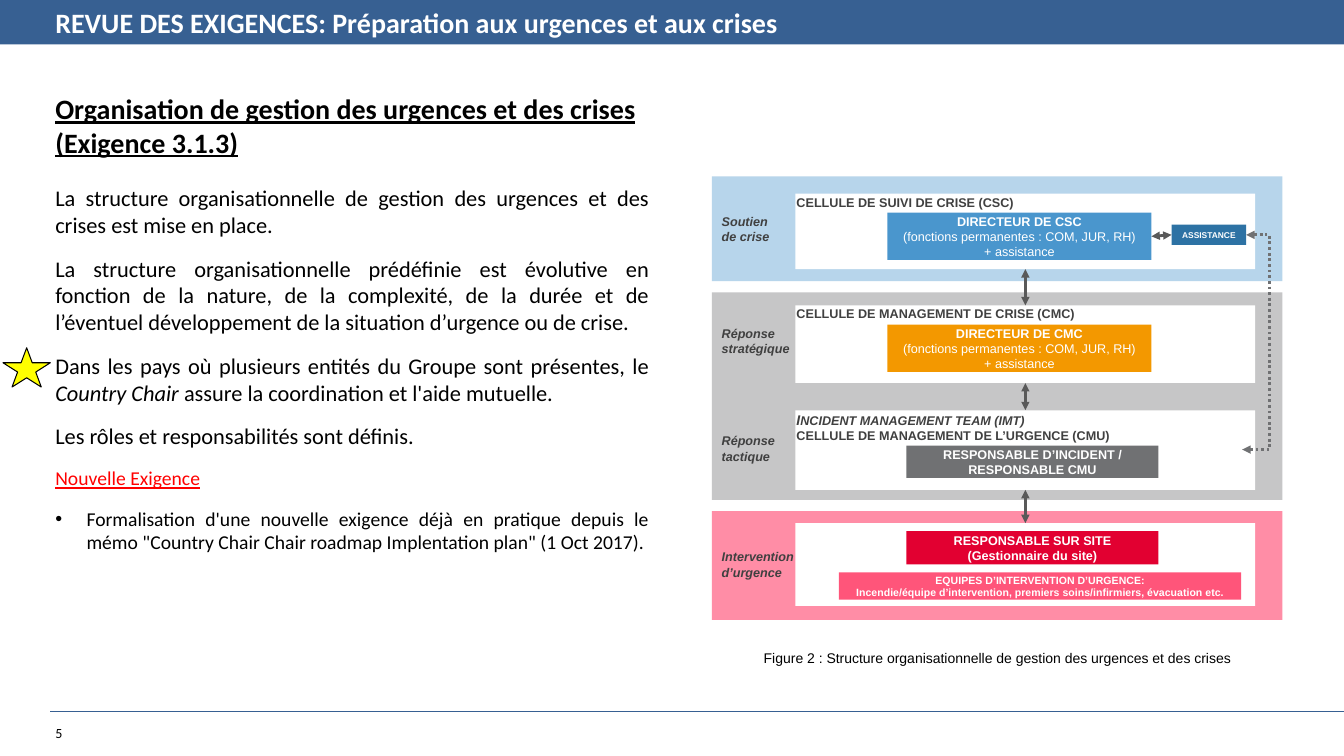
"""Build the slide on how emergencies and crises are managed."""
from dataclasses import dataclass, field
from typing import Any, Optional

import lxml.etree
import pptx
import pptx.dml.color
import pptx.enum.dml
import pptx.enum.shapes
import pptx.enum.text
import pptx.oxml.ns
import pptx.util

Inches = pptx.util.Inches
Pt = pptx.util.Pt
qn = pptx.oxml.ns.qn
ALIGN = pptx.enum.text.PP_ALIGN
ANCHOR = pptx.enum.text.MSO_ANCHOR
SHAPE = pptx.enum.shapes.MSO_SHAPE

HUES = {
    "navy": "376092", "white": "FFFFFF", "black": "000000", "red": "FF0000",
    "yellow": "FFFF00", "ink": "404040", "arrow": "595959", "slate": "707173",
    "sky": "B7D5EB", "grey": "C6C6C7", "pink": "FF8DA6", "blue": "4A96CD",
    "orange": "F39800", "crimson": "E20031", "rose": "FF557A", "teal": "2D72A4",
}


@dataclass
class Box:
    name: str
    x: float
    y: float
    w: float
    h: float
    fill: str
    lines: list[tuple[str, dict[str, Any]]] = field(default_factory=list)
    style: dict[str, Any] = field(default_factory=dict)
    anchor: Any = ANCHOR.TOP
    inset: float = 0.01


@dataclass
class Label:
    text: str
    y: float
    w: float


@dataclass
class Link:
    start: tuple[float, float]
    end: tuple[float, float]
    hue: str = "arrow"
    width: float = 2
    head: bool = False
    tail: bool = False
    dots: bool = False
    source: Optional[tuple[str, int]] = None
    target: Optional[tuple[str, int]] = None


def shade(name: str) -> pptx.dml.color.RGBColor:
    return pptx.dml.color.RGBColor.from_string(HUES[name])


def write(frame, text: str, *, size: float = 9, font: str = "Arial", hue: str = "black",
          bold: bool = False, slant: bool = False, under: bool = False,
          align=ALIGN.LEFT, before: float = 0, after: float = 0,
          bullet: bool = False, join: bool = False) -> None:
    para = frame.paragraphs[-1]
    if para.runs and not join:
        para = frame.add_paragraph()
    if not join:
        para.alignment = align
        para.space_before, para.space_after = Pt(before), Pt(after)
    if bullet:
        props = para._p.get_or_add_pPr()
        props.set("marL", str(Inches(0.31)))
        props.set("indent", str(Inches(-0.31)))
        lxml.etree.SubElement(props, qn("a:buFont"), typeface="Arial")
        lxml.etree.SubElement(props, qn("a:buChar"), char="•")
    run = para.add_run()
    run.text = text
    run.font.size, run.font.name = Pt(size), font
    run.font.bold, run.font.italic, run.font.underline = bold, slant, under
    run.font.color.rgb = shade(hue)


def frame_at(slide, x: float, y: float, w: float, h: float, anchor=ANCHOR.TOP):
    frame = slide.shapes.add_textbox(Inches(x), Inches(y), Inches(w), Inches(h)).text_frame
    frame.word_wrap = True
    frame.vertical_anchor = anchor
    return frame


def draw_box(slide, box: Box, kind=SHAPE.RECTANGLE, edge: str = ""):
    shape = slide.shapes.add_shape(
        kind, Inches(box.x), Inches(box.y), Inches(box.w), Inches(box.h))
    shape.shadow.inherit = False
    shape.fill.solid()
    shape.fill.fore_color.rgb = shade(box.fill)
    if edge:
        shape.line.color.rgb = shade(edge)
        shape.line.width = Pt(0.75)
    else:
        shape.line.fill.background()
    frame = shape.text_frame
    frame.vertical_anchor = box.anchor
    frame.margin_left = frame.margin_right = Inches(box.inset)
    frame.margin_top = frame.margin_bottom = Inches(box.inset)
    for text, extra in box.lines:
        write(frame, text, **{**box.style, **extra})
    return shape


def draw_link(slide, link: Link, shapes: dict[str, Any]) -> None:
    line = slide.shapes.add_connector(
        pptx.enum.shapes.MSO_CONNECTOR.STRAIGHT,
        *(Inches(n) for n in link.start + link.end))
    if link.source:
        line.begin_connect(shapes[link.source[0]], link.source[1])
    if link.target:
        line.end_connect(shapes[link.target[0]], link.target[1])
    line.line.color.rgb = shade(link.hue)
    line.line.width = Pt(link.width)
    if link.dots:
        line.line.dash_style = pptx.enum.dml.MSO_LINE.ROUND_DOT
    props = line.element.spPr
    for tag, shown in (("a:headEnd", link.head), ("a:tailEnd", link.tail)):
        if shown:
            lxml.etree.SubElement(props.find(qn("a:ln")), qn(tag), type="triangle")
    lxml.etree.SubElement(props, qn("a:effectLst"))


PANEL = {"hue": "ink", "bold": True}
CHIP = {"hue": "white", "bold": True, "align": ALIGN.CENTER}
LEFT, MID, WIDE = 7.06, 10.17, 5.66


def panel(name: str, y: float, h: float, *lines) -> Box:
    return Box(name, 7.89, y, 4.56, h, "white", list(lines), PANEL)


def chief(name: str, y: float, fill: str) -> Box:
    lines = [(f"DIRECTEUR DE {name}", {}),
             ("(fonctions permanentes : COM, JUR, RH)", {"bold": False}),
             ("+ assistance", {"bold": False})]
    return Box(f"chief {name}", 8.8, y, 2.62, 0.47, fill, lines, CHIP)


BOXES = [
    Box("tactics", LEFT, 2.9, WIDE, 2.06, "grey"),
    Box("support", LEFT, 1.75, WIDE, 1.04, "sky"),
    Box("action", LEFT, 5.07, WIDE, 1.08, "pink"),
    panel("CSC", 1.92, 0.75, ("CELLULE DE SUIVI DE CRISE (CSC)", {})),
    panel("CMC", 3.03, 0.77, ("CELLULE DE MANAGEMENT DE CRISE (CMC)", {})),
    panel("CMU", 4.07, 0.79,
          ("I", {"size": 10, "slant": True}),
          ("NCIDENT MANAGEMENT TEAM (IMT)", {"slant": True, "join": True}),
          ("CELLULE DE MANAGEMENT DE L’URGENCE (CMU)", {})),
    panel("site", 5.19, 0.82),
    chief("CSC", 2.11, "blue"),
    chief("CMC", 3.22, "orange"),
    Box("help", 11.62, 2.23, 0.74, 0.2, "teal", [("ASSISTANCE", {})],
        {**CHIP, "size": 6}, ANCHOR.MIDDLE),
    Box("lead", 8.99, 4.42, 2.5, 0.32, "slate",
        [("RESPONSABLE D’INCIDENT /", {}), ("RESPONSABLE CMU", {})], CHIP),
    Box("head", 8.99, 5.27, 2.5, 0.33, "crimson",
        [("RESPONSABLE SUR SITE", {}), ("(Gestionnaire du site)", {})], CHIP, ANCHOR.MIDDLE),
    Box("teams", 8.32, 5.68, 3.99, 0.27, "rose",
        [("EQUIPES D’INTERVENTION D’URGENCE:", {}),
         ("Incendie/équipe d’intervention, premiers soins/infirmiers, évacuation etc.", {})],
        {**CHIP, "size": 7.5}, ANCHOR.MIDDLE),
]
LABELS = [Label("Soutien de crise", 2.07, 0.83), Label("Réponse stratégique", 3.18, 0.96),
          Label("Réponse tactique", 4.25, 0.83), Label("Intervention d’urgence", 5.4, 1.13)]
STEPS = [("CSC", 2.67, "CMC", 3.03), ("CMC", 3.8, "CMU", 4.07), ("CMU", 4.86, "site", 5.19)]
LINKS = [Link((MID, top), (MID, low), head=True, tail=True, source=(upper, 2), target=(lower, 0))
         for upper, top, lower, low in STEPS] + [
    Link((11.42, 2.34), (11.62, 2.33), head=True, tail=True,
         source=("chief CSC", 3), target=("help", 1)),
    Link((12.59, 2.34), (12.59, 4.46), "slate", dots=True),
    Link((12.32, 4.46), (12.59, 4.46), "slate", head=True, dots=True),
    Link((12.36, 2.33), (12.57, 2.33), "slate", head=True, dots=True, source=("help", 3)),
]
BODY = {"size": 16, "font": "Calibri", "align": ALIGN.JUSTIFY, "before": 6, "after": 6}
PROSE = [
    ("Organisation de gestion des urgences et des crises (Exigence 3.1.3)",
     {"size": 20, "bold": True, "under": True, "align": ALIGN.LEFT, "before": 0, "after": 12}),
    ("La structure organisationnelle de gestion des urgences et des crises est mise en place.", {}),
    ("La structure organisationnelle prédéfinie est évolutive en fonction de la nature, de la "
     "complexité, de la durée et de l’éventuel développement de la situation d’urgence ou de "
     "crise.", {}),
    ("Dans les pays où plusieurs entités du Groupe sont présentes, le ", {}),
    ("Country Chair", {"slant": True, "join": True}),
    (" assure la coordination et l'aide mutuelle.", {"join": True}),
    ("Les rôles et responsabilités sont définis.", {}),
    ("Nouvelle Exigence", {"size": 14, "hue": "red", "under": True}),
    ("Formalisation d'une nouvelle exigence déjà en pratique depuis le mémo \"Country Chair "
     "Chair roadmap Implentation plan\" (1 Oct 2017).", {"size": 14, "bullet": True}),
]


def main() -> None:
    deck = pptx.Presentation()
    deck.slide_width, deck.slide_height = Inches(13.33), Inches(7.5)
    slide = deck.slides.add_slide(deck.slide_layouts[6])
    draw_link(slide, Link((0.5, 7.06), (13.33, 7.06), "navy", 0.75), {})
    write(frame_at(slide, 0.45, 7.14, 0.71, 0.27), "5", size=10, font="Calibri")
    draw_box(slide, Box("banner", 0, 0, 13.33, 0.44, "navy"))
    write(frame_at(slide, 0.45, 0, 10.47, 0.44, ANCHOR.MIDDLE),
          "REVUE DES EXIGENCES: Préparation aux urgences et aux crises",
          size=20, font="Calibri", hue="white", bold=True)
    prose = frame_at(slide, 0.45, 0.86, 6.09, 5.88)
    for text, extra in PROSE:
        write(prose, text, **{**BODY, **extra})
    write(frame_at(slide, LEFT, 6.39, WIDE, 0.27),
          "Figure 2 : Structure organisationnelle de gestion des urgences et des crises",
          size=10, align=ALIGN.CENTER)
    draw_box(slide, Box("star", 0.03, 3.45, 0.47, 0.39, "yellow"), SHAPE.STAR_5_POINT, "black")
    shapes = {box.name: draw_box(slide, box) for box in BOXES}
    for label in LABELS:
        write(frame_at(slide, LEFT, label.y, label.w, 0.4), label.text,
              hue="ink", bold=True, slant=True)
    for link in LINKS:
        draw_link(slide, link, shapes)
    deck.save("out.pptx")


if __name__ == "__main__":
    main()
